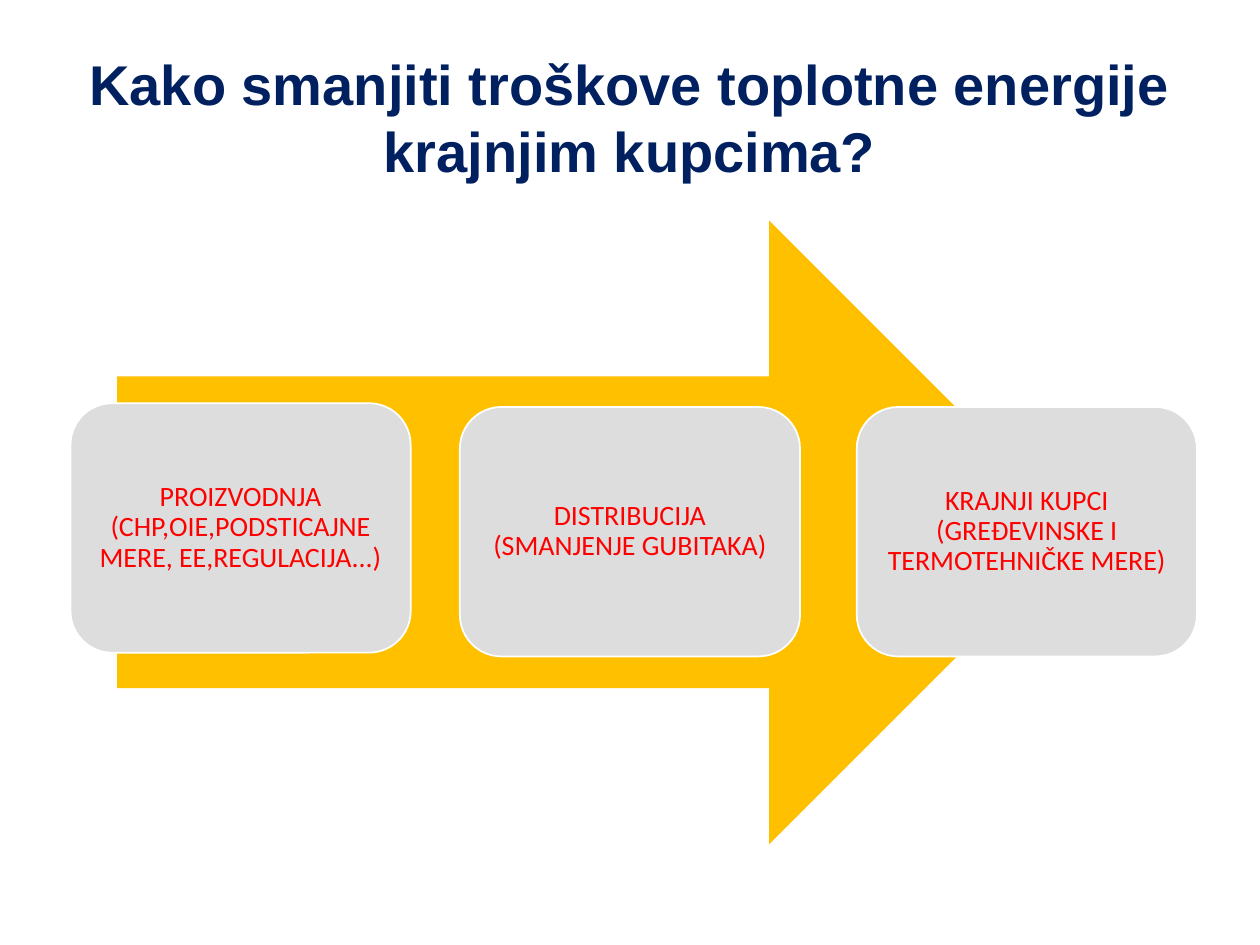
from dataclasses import dataclass

import pptx
import pptx.dml.color
import pptx.enum.shapes
import pptx.enum.text
import pptx.util

Inches = pptx.util.Inches
Pt = pptx.util.Pt
ShapeType = pptx.enum.shapes.MSO_SHAPE


@dataclass(frozen=True)
class Theme:
    title_color: str = "002060"
    arrow_color: str = "FFC000"
    stage_fill: str = "DDDDDD"
    stage_line: str = "FFFFFF"
    stage_text: str = "FF0000"
    title_font: str = "Arial"
    stage_font: str = "Calibri"
    title_size: int = 32
    stage_size: int = 16


THEME = Theme()
STAGE_WIDTH, STAGE_HEIGHT = 2.7, 1.98
STAGES = [
    (0.56, 3.2, "PROIZVODNJA (CHP,OIE,PODSTICAJNE MERE, EE,REGULACIJA...)"),
    (3.65, 3.23, "DISTRIBUCIJA (SMANJENJE GUBITAKA)"),
    (6.8, 3.23, "KRAJNJI KUPCI (GREĐEVINSKE I TERMOTEHNIČKE MERE)"),
]


def rgb(value):
    return pptx.dml.color.RGBColor.from_string(value)


def write_text(shape, text, font, size, color, bold=False, line_spacing=1.0):
    """Write one centred paragraph in the vertical middle of a shape."""
    frame = shape.text_frame
    frame.word_wrap = True
    frame.vertical_anchor = pptx.enum.text.MSO_ANCHOR.MIDDLE
    paragraph = frame.paragraphs[0]
    paragraph.alignment = pptx.enum.text.PP_ALIGN.CENTER
    paragraph.line_spacing = line_spacing
    run = paragraph.add_run()
    run.text = text
    run.font.name = font
    run.font.size = Pt(size)
    run.font.bold = bold
    run.font.color.rgb = rgb(color)


def add_filled_shape(slide, shape_type, left, top, width, height, fill):
    shape = slide.shapes.add_shape(
        shape_type, Inches(left), Inches(top), Inches(width), Inches(height))
    shape.shadow.inherit = False
    shape.fill.solid()
    shape.fill.fore_color.rgb = rgb(fill)
    shape.line.fill.background()
    return shape


def add_title(slide, text):
    title = slide.shapes.add_textbox(
        Inches(0.5), Inches(0.3), Inches(9), Inches(1.25))
    write_text(title, text, THEME.title_font, THEME.title_size,
               THEME.title_color, bold=True)


def add_stage(slide, left, top, text):
    stage = add_filled_shape(slide, ShapeType.ROUNDED_RECTANGLE, left, top,
                             STAGE_WIDTH, STAGE_HEIGHT, THEME.stage_fill)
    stage.line.color.rgb = rgb(THEME.stage_line)
    stage.line.width = Pt(1)
    frame = stage.text_frame
    frame.margin_left = frame.margin_right = Inches(0.07)
    frame.margin_top = frame.margin_bottom = Inches(0.07)
    write_text(stage, text, THEME.stage_font, THEME.stage_size,
               THEME.stage_text, line_spacing=0.9)


def main():
    presentation = pptx.Presentation()
    presentation.slide_width = Inches(10)
    presentation.slide_height = Inches(7.5)
    slide = presentation.slides.add_slide(presentation.slide_layouts[6])

    add_title(slide, "Kako smanjiti troškove toplotne energije krajnjim kupcima?")
    add_filled_shape(slide, ShapeType.RIGHT_ARROW, 0.93, 1.75, 7.65, 4.95,
                     THEME.arrow_color)
    for left, top, text in STAGES:
        add_stage(slide, left, top, text)

    presentation.save("out.pptx")


if __name__ == "__main__":
    main()
